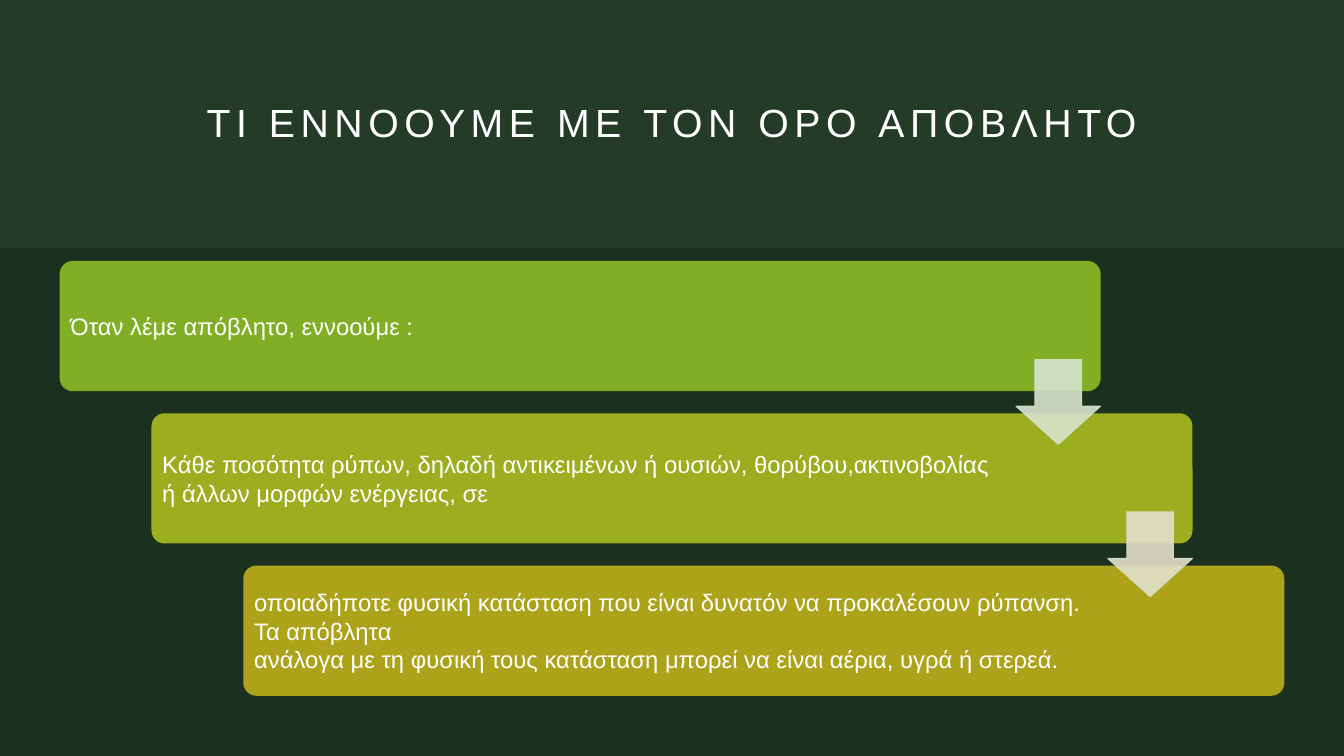
import pptx
import pptx.util
import pptx.dml.color
import pptx.enum.shapes
import pptx.enum.text
import lxml.etree

Pt = pptx.util.Pt
SHAPES = pptx.enum.shapes.MSO_SHAPE
ALIGN = pptx.enum.text.PP_ALIGN
COLORS = {
    "backdrop": "243B28", "panel": "1C3020", "text": "FFFFFF",
    "green": "80AF26", "lime": "9BAE20", "olive": "ADA31A",
    "pale_green": "D8E3CD", "pale_sand": "E3E0CC",
}


def add_filled(kind, place, color, line=None, alpha=None):
    shape = page.shapes.add_shape(kind, *[Pt(length) for length in place])
    shape.shadow.inherit = False
    shape.fill.solid()
    shape.fill.fore_color.rgb = pptx.dml.color.RGBColor.from_string(COLORS[color])
    if line:
        shape.line.width = Pt(0.75)
        shape.line.color.rgb = pptx.dml.color.RGBColor.from_string(COLORS[line])
    else:
        shape.line.fill.background()
    if alpha:
        for tint in shape.element.spPr.iter(pptx.oxml.ns.qn("a:srgbClr")):
            lxml.etree.SubElement(tint, pptx.oxml.ns.qn("a:alpha"), val=str(alpha * 1000))
    return shape


def add_text(place, words, size, inset, align):
    box = page.shapes.add_textbox(*[Pt(length) for length in place])
    frame_format = {
        "word_wrap": True,
        "vertical_anchor": pptx.enum.text.MSO_ANCHOR.MIDDLE,
        "margin_left": Pt(inset), "margin_right": Pt(inset),
        "margin_top": Pt(inset), "margin_bottom": Pt(inset),
    }
    for name, value in frame_format.items():
        setattr(box.text_frame, name, value)
    para = box.text_frame.paragraphs[0]
    para.alignment = align
    span = para.add_run()
    span.text = words.replace("_", "\u00a0")
    for name, value in {"name": "Arial", "size": Pt(size)}.items():
        setattr(span.font, name, value)
    span.font.color.rgb = pptx.dml.color.RGBColor.from_string(COLORS["text"])
    return span


deck = pptx.Presentation()
deck.slide_width, deck.slide_height = Pt(960), Pt(540)
page = deck.slides.add_slide(deck.slide_layouts[6])

# Background and lower panel
page.background.fill.solid()
page.background.fill.fore_color.rgb = pptx.dml.color.RGBColor.from_string(COLORS["backdrop"])
add_filled(SHAPES.RECTANGLE, (0, 177.5, 960, 362.5), "panel")

# Title with wide letter spacing
title = add_text((85, 42.5, 790, 88.5), "ΤΙ_ΕΝΝΟΟΥΜΕ_ΜΕ_ΤΟΝ_ΟΡΟ_ΑΠΟΒΛΗΤΟ",
                 28, 0, ALIGN.CENTER)
title.font._element.set("spc", "400")

# Staircase of steps; an underscore stands for a non-breaking space
STEPS = [
    ("green", 643, "Όταν_λέμε_απόβλητο,_εννοούμε_:"),
    ("lime", 612, "Κάθε_ποσότητα_ρύπων,_δηλαδή_αντικειμένων_ή_ουσιών,_"
     "θορύβου,ακτινοβολίας ή_άλλων_μορφών_ενέργειας,_σε_"),
    ("olive", 612, "οποιαδήποτε_φυσική_κατάσταση_που_είναι_δυνατόν_να "
     "προκαλέσουν_ρύπανση. Τα απόβλητα ανάλογα_με_τη_φυσική_τους_"
     "κατάσταση_μπορεί_να_είναι_αέρια,_υγρά_ή_στερεά.__"),
]
LEFT, TOP, WIDTH, HEIGHT = 42.6, 186.4, 743.6, 93
SHIFT_X, SHIFT_Y = 65.6, 108.8
for index, (color, text_width, words) in enumerate(STEPS):
    left, top = LEFT + index * SHIFT_X, TOP + index * SHIFT_Y
    step = add_filled(SHAPES.ROUNDED_RECTANGLE, (left, top, WIDTH, HEIGHT), color)
    step.adjustments[0] = 0.1
    add_text((left + 2.7, top + 2.7, text_width, HEIGHT - 5.4), words, 17, 5, ALIGN.LEFT)

# Arrows joining each step to the next
ARROW = 60.5
for index, color in enumerate(["pale_green", "pale_sand"]):
    left = LEFT + WIDTH - ARROW + index * SHIFT_X
    top = TOP + 70.5 + index * SHIFT_Y
    arrow = add_filled(SHAPES.DOWN_ARROW, (left, top, ARROW, ARROW), color, "pale_green", 90)
    arrow.adjustments[0], arrow.adjustments[1] = 0.55, 0.45

deck.save("out.pptx")
